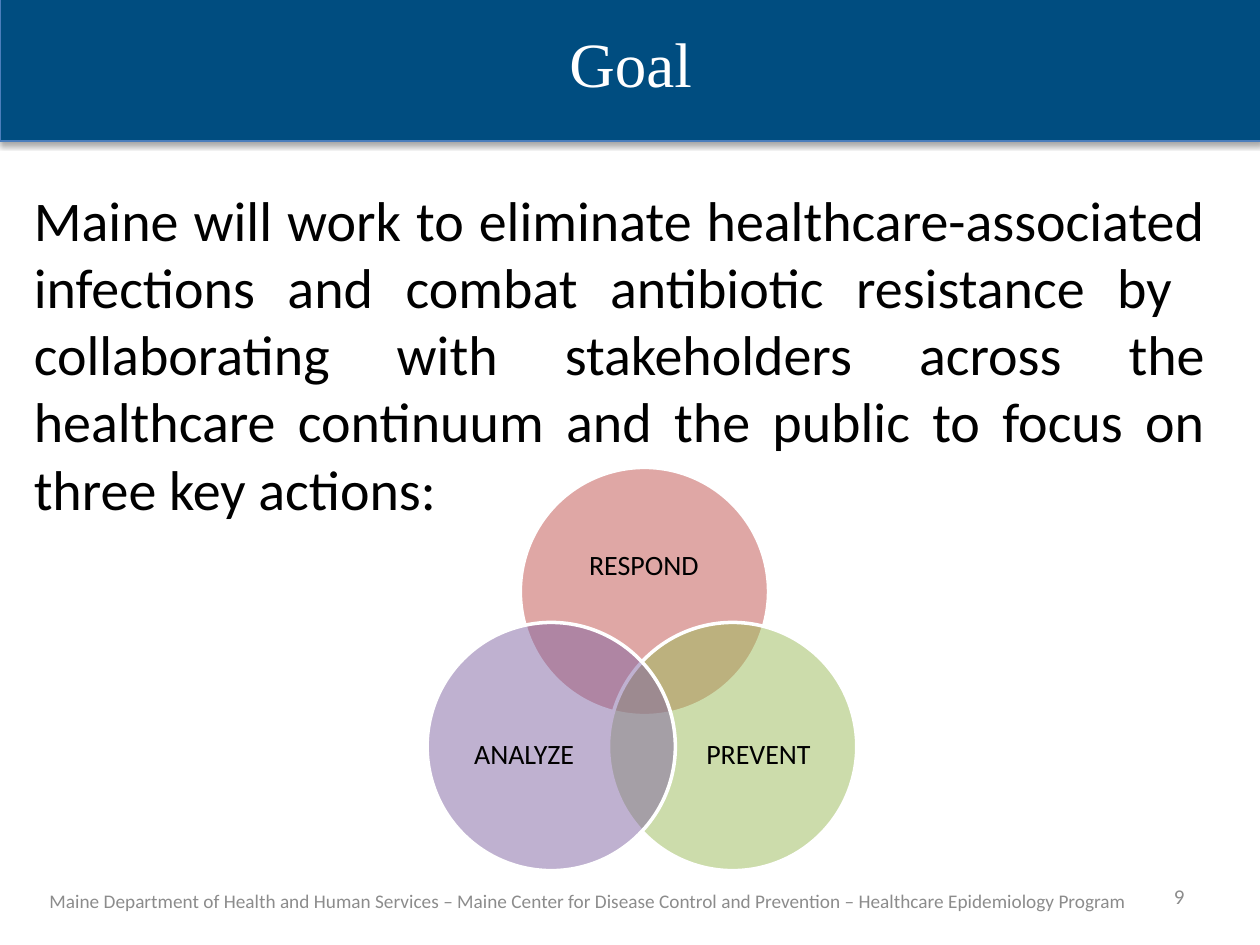
from lxml.etree import SubElement
from pptx import Presentation
from pptx.dml.color import RGBColor
from pptx.enum.shapes import MSO_SHAPE as Shape
from pptx.enum.text import MSO_ANCHOR as Anchor, PP_ALIGN as Align
from pptx.oxml.ns import qn
from pptx.util import Inches, Pt

NAVY = RGBColor(0x00, 0x4D, 0x80)
BLUE = RGBColor(0x4B, 0x7E, 0xBC)
RED = RGBColor(0xC0, 0x50, 0x4D)
GREEN = RGBColor(0x9B, 0xBB, 0x59)
PURPLE = RGBColor(0x80, 0x64, 0xA2)
GRAY = RGBColor(0x8C, 0x8C, 0x8C)
BLACK = RGBColor(0, 0, 0)
WHITE = RGBColor(0xFF, 0xFF, 0xFF)

GOAL = (
    "Maine will work to eliminate healthcare-associated infections and combat "
    "antibiotic resistance by \vcollaborating with stakeholders across the healthcare "
    "continuum and the public to focus on three key actions:"
)
FOOTER = (
    "Maine Department of Health and Human Services – Maine Center for Disease "
    "Control and Prevention – Healthcare Epidemiology Program"
)
CIRCLE_SIZE = 1.97
# Circle colour and offset, label and its box, all relative to the diagram's corner
ACTIONS = [
    (RED, (0.74, 0), "RESPOND", (1.21, 0.47, 1.02, 0.63)),
    (GREEN, (1.44, 1.23), "PREVENT", (2.21, 1.9, 0.84, 0.77)),
    (PURPLE, (0, 1.23), "ANALYZE", (0.35, 1.9, 0.84, 0.77)),
]


def write(shape, text, size, color, align, anchor=Anchor.MIDDLE, font="Calibri"):
    frame = shape.text_frame
    frame.word_wrap = True
    frame.vertical_anchor = anchor
    frame.text = text
    paragraph = frame.paragraphs[0]
    paragraph.alignment = align
    for run in paragraph.runs:
        run.font.name = font
        run.font.size = Pt(size)
        run.font.color.rgb = color
    return frame


def add_text(slide, box, *style):
    textbox = slide.shapes.add_textbox(*map(Inches, box))
    return write(textbox, *style)


def add_filled(slide, kind, box, fill, line, line_width):
    shape = slide.shapes.add_shape(kind, *map(Inches, box))
    shape.shadow.inherit = False
    shape.fill.solid()
    shape.fill.fore_color.rgb = fill
    shape.line.color.rgb = line
    shape.line.width = Pt(line_width)
    return shape


def set_alpha(color_element, percent):
    SubElement(color_element, qn("a:alpha"), val=str(percent * 1000))


def add_banner(slide, box):
    banner = add_filled(slide, Shape.RECTANGLE, box, NAVY, BLUE, 0.75)
    effects = banner.element.spPr.find(qn("a:effectLst"))
    shadow = SubElement(
        effects, qn("a:outerShdw"), blurRad=str(Pt(3.1)), dist=str(Pt(1.8)),
        dir=str(90 * 60000), rotWithShape="0",
    )
    set_alpha(SubElement(shadow, qn("a:srgbClr"), val=str(BLACK)), 35)
    write(banner, "Goal", 36, WHITE, Align.CENTER, Anchor.MIDDLE, "Times New Roman")


def add_venn(slide, left, top):
    for color, (dx, dy), label, (label_x, label_y, width, height) in ACTIONS:
        box = (left + dx, top + dy, CIRCLE_SIZE, CIRCLE_SIZE)
        circle = add_filled(slide, Shape.OVAL, box, color, WHITE, 2)
        set_alpha(circle.element.spPr.find(qn("a:solidFill"))[0], 50)
        label_box = (left + label_x, top + label_y, width, height)
        frame = add_text(slide, label_box, label, 16, BLACK, Align.CENTER)
        frame.margin_left = frame.margin_right = 0
        frame.margin_top = frame.margin_bottom = 0
        frame.paragraphs[0].line_spacing = 0.9


def add_footer(slide, number_box, text_box):
    add_text(slide, number_box, "9", 12, GRAY, Align.RIGHT)
    add_text(slide, text_box, FOOTER, 11, GRAY, Align.CENTER)


def main():
    presentation = Presentation()
    presentation.slide_width = Inches(10)
    presentation.slide_height = Inches(7.5)
    slide = presentation.slides.add_slide(presentation.slide_layouts[6])
    add_text(slide, (0.17, 1.42, 9.5, 3.25), GOAL, 32, BLACK, Align.JUSTIFY, Anchor.TOP)
    add_banner(slide, (0, -0.13, 10.01, 1.25))
    add_footer(slide, (7.17, 6.91, 2.33, 0.4), (0.17, 6.95, 9, 0.4))
    add_venn(slide, 3.39, 3.71)
    presentation.save("out.pptx")


if __name__ == "__main__":
    main()
